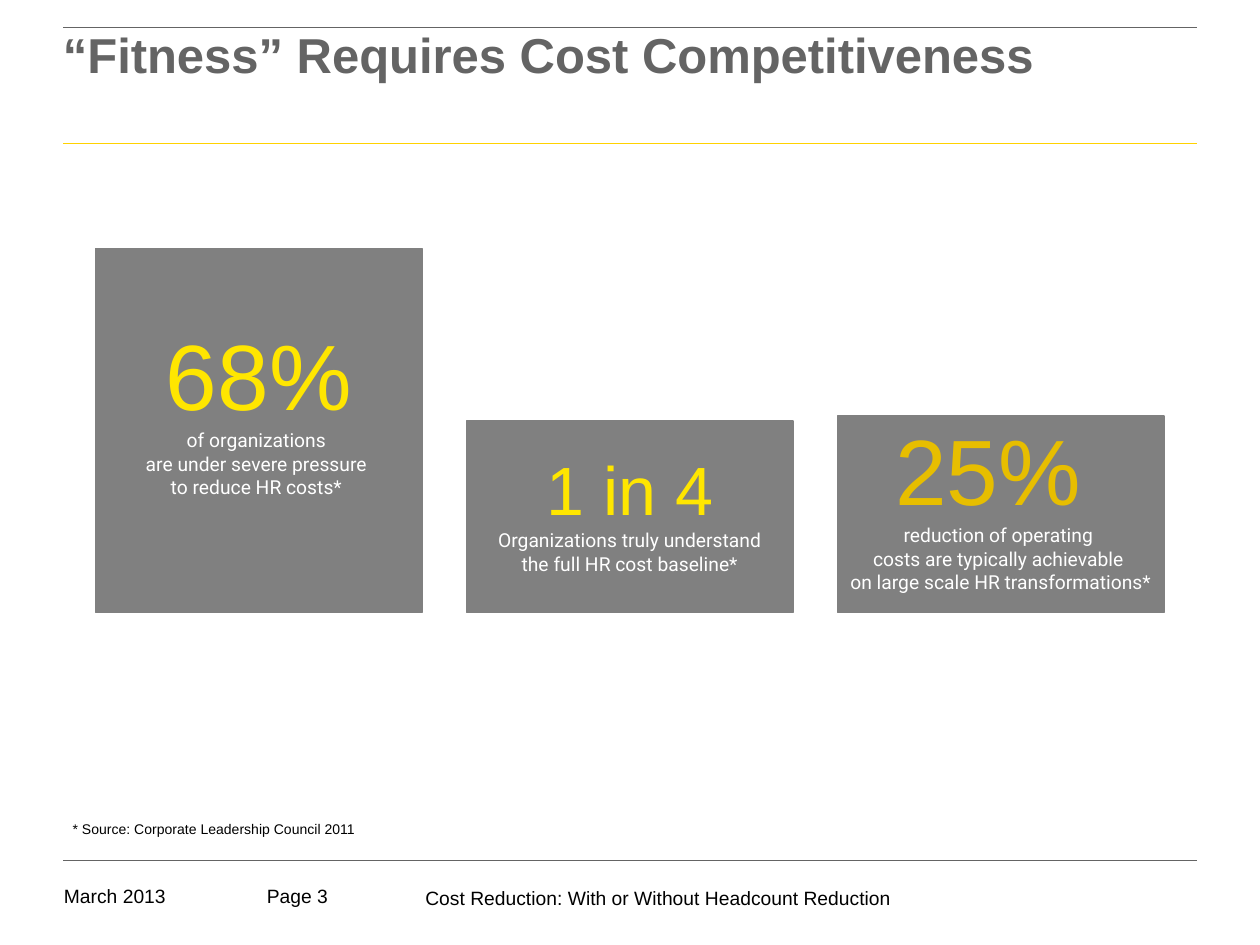
from lxml.etree import SubElement
from pptx import Presentation
from pptx.dml.color import RGBColor
from pptx.enum.shapes import MSO_CONNECTOR as Connector, MSO_SHAPE as Shape
from pptx.enum.text import MSO_ANCHOR as Anchor, PP_ALIGN as Align
from pptx.oxml.ns import qn
from pptx.util import Pt

COLORS = {
    "black": "000000", "white": "FFFFFF", "title": "646464", "box": "808080",
    "rule": "FFD200", "yellow": "FFE600", "gold": "E7BE00",
}


def color(name):
    return RGBColor.from_string(COLORS[name])


class SlideBuilder:
    """Holds the text styles and the current slide."""

    STYLES = {
        "title": ({"name": "Arial", "size": Pt(28), "bold": True}, "title"),
        "footer": ({"name": "Arial", "size": Pt(11)}, "black"),
        "source": ({"name": "Arial", "size": Pt(8)}, "black"),
        "large": ({"name": "Arial", "size": Pt(53)}, "yellow"),
        "large gold": ({"name": "Arial", "size": Pt(53)}, "gold"),
        "medium": ({"name": "Arial", "size": Pt(39)}, "yellow"),
        "caption": ({"name": "Roboto", "size": Pt(11)}, "white"),
    }

    def __init__(self, slide):
        self.slide = slide

    def set_frame(self, frame, margins, anchor):
        sides = ("left", "top", "right", "bottom")
        values = {f"margin_{side}": Pt(margin) for side, margin in zip(sides, margins)}
        values |= {"word_wrap": True, "vertical_anchor": anchor}
        for name, value in values.items():
            setattr(frame, name, value)

    def add_styled_text(self, paragraph, text, style):
        """Add text in a named style, with a line break at each newline."""
        font_values, color_name = self.STYLES[style]
        for number, line in enumerate(text.split("\n")):
            if number:
                paragraph.add_line_break()
            if line:
                run = paragraph.add_run()
                run.text = line
                for name, value in font_values.items():
                    setattr(run.font, name, value)
                run.font.color.rgb = color(color_name)

    def text(self, left, top, width, height, text, style, top_margin=0, spacing=None):
        shape = self.slide.shapes.add_textbox(Pt(left), Pt(top), Pt(width), Pt(height))
        self.set_frame(shape.text_frame, (0, top_margin, 0, 0), Anchor.TOP)
        paragraph = shape.text_frame.paragraphs[0]
        paragraph.line_spacing = spacing
        self.add_styled_text(paragraph, text, style)

    def rule(self, left, right, top, color_name, weight):
        line = self.slide.shapes.add_connector(
            Connector.STRAIGHT, Pt(left), Pt(top), Pt(right), Pt(top))
        line.line.color.rgb = color(color_name)
        line.line.width = Pt(weight)
        SubElement(line._element.spPr, qn("a:effectLst"))

    def box(self, left, top, width, height, margins, paragraphs):
        shape = self.slide.shapes.add_shape(
            Shape.RECTANGLE, Pt(left), Pt(top), Pt(width), Pt(height))
        shape.shadow.inherit = False
        shape.fill.solid()
        shape.fill.fore_color.rgb = color("box")
        shape.line.color.rgb = color("box")
        shape.line.width = Pt(1)
        frame = shape.text_frame
        self.set_frame(frame, margins, Anchor.MIDDLE)
        for number, runs in enumerate(paragraphs):
            paragraph = frame.add_paragraph() if number else frame.paragraphs[0]
            paragraph.alignment = Align.CENTER
            for text, style in runs:
                self.add_styled_text(paragraph, text, style)


def main():
    presentation = Presentation()
    presentation.slide_width, presentation.slide_height = Pt(720), Pt(540)
    builder = SlideBuilder(presentation.slides.add_slide(presentation.slide_layouts[6]))

    # Footer
    builder.text(36.5, 505.5, 101.5, 11.5, "March 2013", "footer")
    builder.text(243, 506.5, 281.5, 14,
                 "Cost Reduction: With or Without Headcount Reduction", "footer")
    builder.text(152.5, 505.5, 52.5, 16, "Page 3", "footer")

    # Horizontal rules
    for top, color_name, weight in ((82, "rule", 1), (491.5, "title", 0.25),
                                    (15.7, "title", 0.5)):
        builder.rule(36, 684, top, color_name, weight)

    # Key figures: equal columns standing on one baseline
    box_left, box_width, box_pitch, baseline = 54.6, 186.6, 212, 350
    figures = [
        (208, (3, 0, 3, 26), [[
            ("68%\n", "large"),
            ("of organizations \nare under severe pressure \nto reduce HR costs* ",
             "caption")]]),
        (109.6, (13, 0, 13, 6.5), [
            [("1 in 4", "medium")],
            [("Organizations truly understand the full HR cost baseline*", "caption")]]),
        (112.4, (3, 0, 3, 13), [[
            ("25% \n", "large gold"),
            ("reduction of operating \ncosts are typically achievable \n"
             "on large scale HR transformations*", "caption")]]),
    ]
    for column, (height, margins, paragraphs) in enumerate(figures):
        builder.box(box_left + column * box_pitch, baseline - height,
                    box_width, height, margins, paragraphs)

    # Title and source
    builder.text(36, 16, 648, 67.5, "“Fitness” Requires Cost Competitiveness",
                 "title", top_margin=3, spacing=0.85)
    builder.text(41.5, 469, 633.5, 9.5,
                 "* Source: Corporate Leadership Council 2011", "source")

    presentation.save("out.pptx")


if __name__ == "__main__":
    main()
